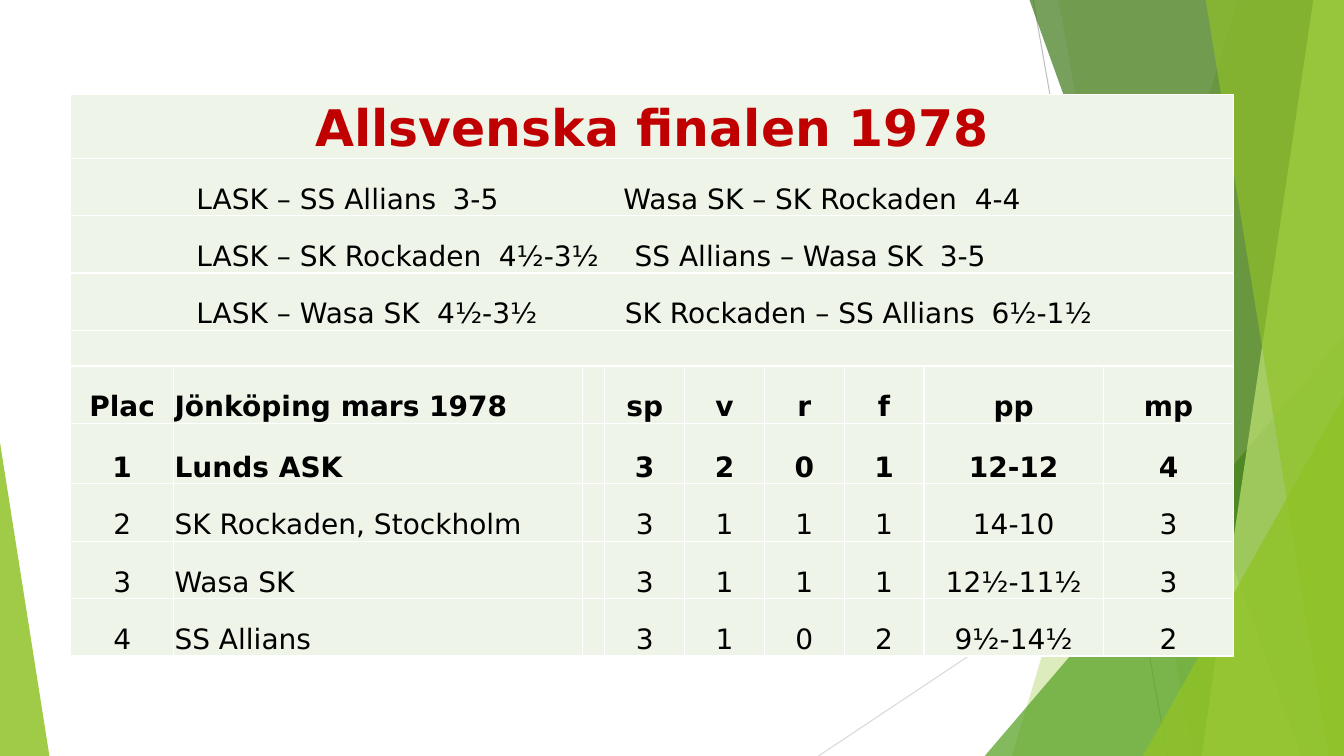
from dataclasses import dataclass

from lxml import etree
from pptx import Presentation
from pptx.dml.color import RGBColor
from pptx.enum import shapes, text
from pptx.oxml.ns import qn
from pptx.util import Pt

WIDTH, HEIGHT = 960, 540
GREEN, CELL, WHITE, BLACK, RED = "90C226", "EEF4E8", "FFFFFF", "000000", "C00000"
FONT = "DejaVu Sans"
CENTER, LEFT = text.PP_ALIGN.CENTER, text.PP_ALIGN.LEFT


@dataclass
class Ray:
    start: tuple[float, float]
    end: tuple[float, float]
    color: str


@dataclass
class Band:
    """Four-sided band reaching the right slide edge."""
    top_left: float
    bottom_left: float
    color: str
    opacity: int


@dataclass
class Wedge:
    """Triangle standing on the bottom slide edge."""
    left: float
    top: float
    width: float
    apex: float
    color: str
    opacity: int


@dataclass
class MatchRow:
    """Two matches with tab stops for score, second match and second score."""
    home: tuple[str, str]
    away: tuple[str, str]
    stops: tuple[float, float, float]


RAYS = [Ray((738, 0), (833.8, HEIGHT), "BFBFBF"),
        Ray((WIDTH, 290.2), (584.6, HEIGHT), "D9D9D9")]
FACETS = [
    Band(884.2, 722.9, GREEN, 30),
    Band(756, 851.8, GREEN, 20),
    Wedge(703.4, 239.8, 256.6, 1, "54A021", 72),
    Band(735.1, 929.5, "3F7819", 70),
    Band(938.2, 858.2, "C0E474", 70),
    Band(861.1, 949, GREEN, 65),
    Wedge(816.5, 283, 143.5, 1, GREEN, 80),
    Wedge(0, 316.1, 35.3, 0, GREEN, 85),
]

TITLE = "Allsvenska finalen 1978"
MATCHES = [
    MatchRow(("LASK – SS Allians", "3-5"), ("Wasa SK – SK Rockaden", "4-4"),
             (183, 305, 556)),
    MatchRow(("LASK – SK Rockaden", "4½-3½"), ("SS Allians – Wasa SK", "3-5"),
             (216, 313, 531)),
    MatchRow(("LASK – Wasa SK", "4½-3½"), ("SK Rockaden – SS Allians", "6½-1½"),
             (172, 306, 568)),
]
STANDINGS = [
    ("Plac", "Jönköping mars 1978", "", "sp", "v", "r", "f", "pp", "mp"),
    ("1", "Lunds ASK", "", "3", "2", "0", "1", "12-12", "4"),
    ("2", "SK Rockaden, Stockholm", "", "3", "1", "1", "1", "14-10", "3"),
    ("3", "Wasa SK", "", "3", "1", "1", "1", "12½-11½", "3"),
    ("4", "SS Allians", "", "3", "1", "0", "2", "9½-14½", "2"),
]
COLUMNS = [73.4, 292.3, 15.8, *[57] * 4, 128.2, 79.9]
ROWS = [45.4, *[41] * 3, 25.4, 41, 43.2, *[41] * 3]
FIRST_STANDING = len(ROWS) - len(STANDINGS)
MATCH_INDENT = 89.7


def rgb(color: str) -> RGBColor:
    return RGBColor.from_string(color)


def set_all(target, values: dict) -> None:
    for name, value in values.items():
        setattr(target, name, value)


def draw_ray(s, ray: Ray) -> None:
    line = s.shapes.add_connector(
        shapes.MSO_CONNECTOR.STRAIGHT, *map(Pt, ray.start + ray.end))
    line.line.color.rgb = rgb(ray.color)
    line.line.width = Pt(0.75)
    etree.SubElement(line._element.spPr, qn("a:effectLst"))


def draw_facet(s, facet: Band | Wedge) -> None:
    if isinstance(facet, Band):
        outline = s.shapes.build_freeform(Pt(facet.top_left), Pt(-0.7))
        corners = [(WIDTH, -0.7), (WIDTH, HEIGHT), (facet.bottom_left, HEIGHT)]
        outline.add_line_segments([(Pt(x), Pt(y)) for x, y in corners])
        sp = outline.convert_to_shape()
    else:
        sp = s.shapes.add_shape(
            shapes.MSO_SHAPE.ISOSCELES_TRIANGLE, Pt(facet.left), Pt(facet.top),
            Pt(facet.width), Pt(HEIGHT - facet.top))
        sp.adjustments[0] = facet.apex
    sp.shadow.inherit = False
    sp.line.fill.background()
    sp.fill.solid()
    sp.fill.fore_color.rgb = rgb(facet.color)
    color = sp._element.spPr.find(qn("a:solidFill"))[0]
    etree.SubElement(color, qn("a:alpha"), val=str(facet.opacity * 1000))


def style_cell(cell) -> None:
    """Give a cell its white borders, pale fill and tight margins."""
    set_all(cell, {"margin_left": Pt(0.7), "margin_right": Pt(0.7),
                   "margin_top": Pt(0.7), "margin_bottom": Pt(0),
                   "vertical_anchor": text.MSO_ANCHOR.BOTTOM})
    for side in ("lnL", "lnR", "lnT", "lnB"):
        border = etree.SubElement(cell._tc.tcPr, qn(f"a:{side}"), w=str(Pt(1)))
        fill = etree.SubElement(border, qn("a:solidFill"))
        etree.SubElement(fill, qn("a:srgbClr"), val=WHITE)
    cell.fill.solid()
    cell.fill.fore_color.rgb = rgb(CELL)


def write(cell, words: str, align=LEFT, size: float = 20, bold: bool = False,
          color: str = BLACK) -> None:
    p = cell.text_frame.paragraphs[0]
    p.alignment = align
    r = p.add_run()
    r.text = words
    set_all(r.font, {"name": FONT, "size": Pt(size), "bold": bold})
    r.font.color.rgb = rgb(color)


def write_matches(cell, row: MatchRow) -> None:
    cell.margin_left = Pt(MATCH_INDENT)
    pPr = cell.text_frame.paragraphs[0]._p.get_or_add_pPr()
    stops = etree.SubElement(pPr, qn("a:tabLst"))
    for stop in row.stops:
        etree.SubElement(stops, qn("a:tab"), pos=str(Pt(stop)), algn="l")
    write(cell, "\t".join(row.home + row.away))


def draw_table(s) -> None:
    table = s.shapes.add_table(
        len(ROWS), len(COLUMNS), Pt(50.6), Pt(67.7),
        Pt(sum(COLUMNS)), Pt(sum(ROWS))).table
    set_all(table, {"first_row": False, "horz_banding": False})
    for column, width in zip(table.columns, COLUMNS):
        column.width = Pt(width)
    for row, height in zip(table.rows, ROWS):
        row.height = Pt(height)
    for cell in table.iter_cells():
        style_cell(cell)
    for i in range(FIRST_STANDING):
        table.cell(i, 0).merge(table.cell(i, len(COLUMNS) - 1))

    write(table.cell(0, 0), TITLE, CENTER, 36, True, RED)
    for i, match_row in enumerate(MATCHES, 1):
        write_matches(table.cell(i, 0), match_row)
    for i, standing in enumerate(STANDINGS):
        for j, words in enumerate(standing):
            if words:
                write(table.cell(FIRST_STANDING + i, j), words,
                      LEFT if j == 1 else CENTER, bold=i < 2)


def main() -> None:
    prs = Presentation()
    set_all(prs, {"slide_width": Pt(WIDTH), "slide_height": Pt(HEIGHT)})
    s = prs.slides.add_slide(prs.slide_layouts[6])
    for ray in RAYS:
        draw_ray(s, ray)
    for facet in FACETS:
        draw_facet(s, facet)
    draw_table(s)
    prs.save("out.pptx")


if __name__ == "__main__":
    main()
